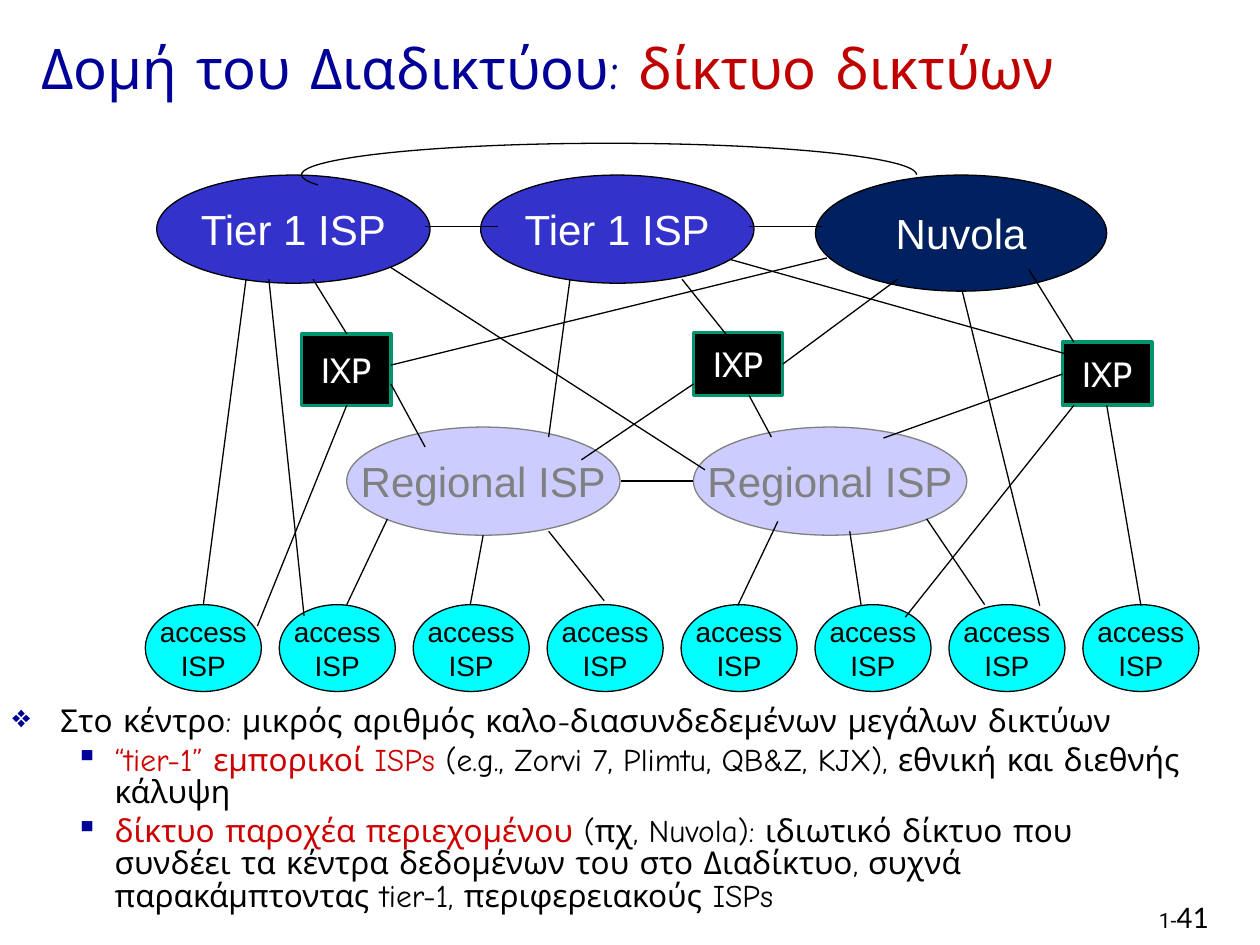
from lxml.etree import SubElement as Sub
from pptx import Presentation
from pptx.dml.color import RGBColor as Rgb
from pptx.enum.shapes import MSO_CONNECTOR as Link, MSO_SHAPE as Kind
from pptx.enum.text import MSO_ANCHOR as Anchor, PP_ALIGN as Align
from pptx.oxml.ns import qn
from pptx.util import Cm, Pt

INK = {
    "black": "000000", "white": "FFFFFF", "navy": "000099", "brick": "C00000",
    "red": "CC0000", "cyan": "00FFFF", "lilac": "CCCCFF", "gray": "808080",
    "blue": "3333CC", "deep": "002060", "green": "00956F",
}

# Node styles: shape, fill, line, line width, font, text size, text colour
STYLE = {
    "access": (Kind.OVAL, "cyan", "black", 0.75, "Arial", 16, "black"),
    "region": (Kind.OVAL, "lilac", "gray", 0.75, "Arial", 24, "gray"),
    "tier": (Kind.OVAL, "blue", "black", 0.75, "Arial", 24, "white"),
    "content": (Kind.OVAL, "deep", "black", 0.75, "Arial", 24, "white"),
    "ixp": (Kind.RECTANGLE, "black", "green", 2, "Cabin", 20, "white"),
}

# Nodes in cm from the diagram's corner: style, text, left, top, width, height
NODES = [("access", "access\nISP", 2.7 * i, 9.3, 2.34, 1.75) for i in range(8)]
NODES += [("region", "Regional ISP", x, 5.72, 5.51, 2.18) for x in (4.06, 11.05)]
NODES += [("tier", "Tier 1 ISP", x, 0.64, 5.51, 2.18) for x in (0.23, 6.76)]
NODES += [
    ("content", "Nuvola", 13.51, 0.64, 5.87, 2.34),
    ("ixp", "IXP", 3.15, 3.84, 1.8, 1.45),
    ("ixp", "IXP", 11.05, 3.81, 1.8, 1.27),
    ("ixp", "IXP", 18.49, 4.01, 1.8, 1.27),
]

# Links in cm from the diagram's corner: x and y of both ends
LINKS = [
    # Between peers
    (5.64, 1.68, 7.11, 1.68), (12.17, 1.68, 13.64, 1.68), (9.58, 6.81, 11.05, 6.81),
    # From the top row to the exchange points
    (3.38, 2.74, 4.06, 3.84), (10.82, 2.74, 11.94, 4.14), (11.79, 2.34, 18.54, 4.24),
    (13.74, 2.31, 4.95, 4.47), (15.16, 2.74, 12.85, 4.45), (17.81, 2.54, 18.72, 4.01),
    # From the top row to regional networks
    (4.93, 2.49, 11.28, 6.58), (8.56, 2.74, 8.13, 5.92),
    # From the top row to access networks
    (2.03, 2.74, 1.17, 9.3), (2.49, 2.74, 3.2, 9.53), (16.46, 2.95, 18.03, 9.32),
    # From exchange points to regional networks
    (4.95, 4.85, 5.64, 6.12), (11.05, 4.85, 8.79, 6.38),
    (12.17, 5.08, 12.62, 5.92), (18.49, 4.65, 14.88, 5.94),
    # From exchange points to access networks
    (4.06, 5.28, 2.26, 9.73), (18.72, 5.28, 15.32, 9.55), (19.38, 5.28, 20.07, 9.32),
    # From regional to access networks
    (4.88, 7.57, 4.06, 9.3), (6.81, 7.9, 6.55, 9.3), (8.13, 7.82, 9.25, 9.22),
    (12.75, 7.62, 11.94, 9.32), (14.2, 7.82, 14.43, 9.32), (15.75, 7.57, 16.92, 9.3),
]

# Notes: level and coloured runs
NOTES = [
    (0, [("Στο κέντρο: μικρός αριθμός καλο-διασυνδεδεμένων μεγάλων δικτύων", "black")]),
    (1, [("“tier-1” εμπορικοί ISPs ", "red"),
         ("(e.g., Zorvi 7, Plimtu, QB&Z, KJX), εθνική και διεθνής κάλυψη", "black")]),
    (1, [("δίκτυο παροχέα περιεχομένου ", "red"),
         ("(πχ, Nuvola): ιδιωτικό δίκτυο που συνδέει τα κέντρα δεδομένων του στο "
          "Διαδίκτυο, συχνά παρακάμπτοντας tier-1, περιφερειακούς ISPs", "black")]),
]
# Bullets by level: sign, size in percent, left margin and hang in cm
MARKS = [("❖", 100, 0.97, 0.97), ("▪", 100, 2.06, 0.79)]


def tint(name):
    return Rgb.from_string(INK[name])


def put(obj, **form):
    for key, val in form.items():
        setattr(obj, key, val)


def place(shape, box):
    put(shape, **dict(zip(("left", "top", "width", "height"), map(Cm, box))))


def write(par, text, face, size, color):
    run = par.add_run()
    run.text = text
    put(run.font, name=face, size=Pt(size), bold=False)
    run.font.color.rgb = tint(color)


def draw_line(line, color, width):
    line.color.rgb = tint(color)
    line.width = Pt(width)


def add_title(slide, box):
    title = slide.shapes.title
    place(title, box)
    put(title.text_frame, vertical_anchor=Anchor.MIDDLE, word_wrap=True)
    par = title.text_frame.paragraphs[0]
    par.alignment = Align.LEFT
    for text, color in (("Δομή του Διαδικτύου: ", "navy"), ("δίκτυο δικτύων", "brick")):
        write(par, text, "Comic Neue", 32, color)


def add_node(slide, style, text, box):
    kind, fill, edge, width, face, size, color = STYLE[style]
    node = slide.shapes.add_shape(kind, *map(Cm, box))
    node.shadow.inherit = False
    node.fill.solid()
    node.fill.fore_color.rgb = tint(fill)
    draw_line(node.line, edge, width)
    frame = node.text_frame
    put(frame, word_wrap=False, vertical_anchor=Anchor.MIDDLE)
    for i, part in enumerate(text.split("\n")):
        par = frame.add_paragraph() if i else frame.paragraphs[0]
        par.alignment = Align.CENTER
        write(par, part, face, size, color)


def add_net(slide, left, top):
    for style, text, x, y, w, h in NODES:
        add_node(slide, style, text, (left + x, top + y, w, h))
    for x1, y1, x2, y2 in LINKS:
        ends = map(Cm, (left + x1, top + y1, left + x2, top + y2))
        link = slide.shapes.add_connector(Link.STRAIGHT, *ends)
        draw_line(link.line, "black", 0.75)
        Sub(link._element.spPr, qn("a:effectLst"))
    # Arc over the top row, from 178 to 360 degrees
    arc = slide.shapes.add_shape(Kind.ARC, Cm(left + 3.15), Cm(top), Cm(12.4), Cm(1.27))
    arc.shadow.inherit = False
    arc.adjustments[0], arc.adjustments[1] = 178 * 0.6, 0
    arc.fill.background()
    draw_line(arc.line, "black", 0.75)


def add_mark(par, level):
    sign, size, left, hang = MARKS[level]
    props = par._p.get_or_add_pPr()
    props.set("marL", str(Cm(left)))
    props.set("indent", str(-Cm(hang)))
    Sub(Sub(props, qn("a:buClr")), qn("a:srgbClr"), val=INK["navy"])
    Sub(props, qn("a:buSzPct"), val=str(size * 1000))
    Sub(props, qn("a:buChar"), char=sign)


def add_notes(slide, box):
    frame = slide.shapes.add_textbox(*map(Cm, box)).text_frame
    frame.word_wrap = True
    for i, (level, runs) in enumerate(NOTES):
        par = frame.add_paragraph() if i else frame.paragraphs[0]
        put(par, level=level, line_spacing=0.85, space_before=Pt(4))
        add_mark(par, level)
        for text, color in runs:
            write(par, text, "Comic Neue", 18, color)


def add_number(slide, box):
    frame = slide.shapes.add_textbox(*map(Cm, box)).text_frame
    par = frame.paragraphs[0]
    write(par, "1-", "Roboto", 12, "black")
    write(par, "41", "Calibri", 18, "black")


def main():
    deck = Presentation()
    put(deck, slide_width=Cm(25.4), slide_height=Cm(19.05))
    slide = deck.slides.add_slide(deck.slide_layouts[5])
    add_title(slide, (0.58, 0.46, 22.48, 1.8))
    add_notes(slide, (0, 14.12, 24.3, 4.9))
    add_number(slide, (23.11, 17.96, 1.88, 0.76))
    add_net(slide, 2.93, 2.89)
    deck.save("out.pptx")


if __name__ == "__main__":
    main()
